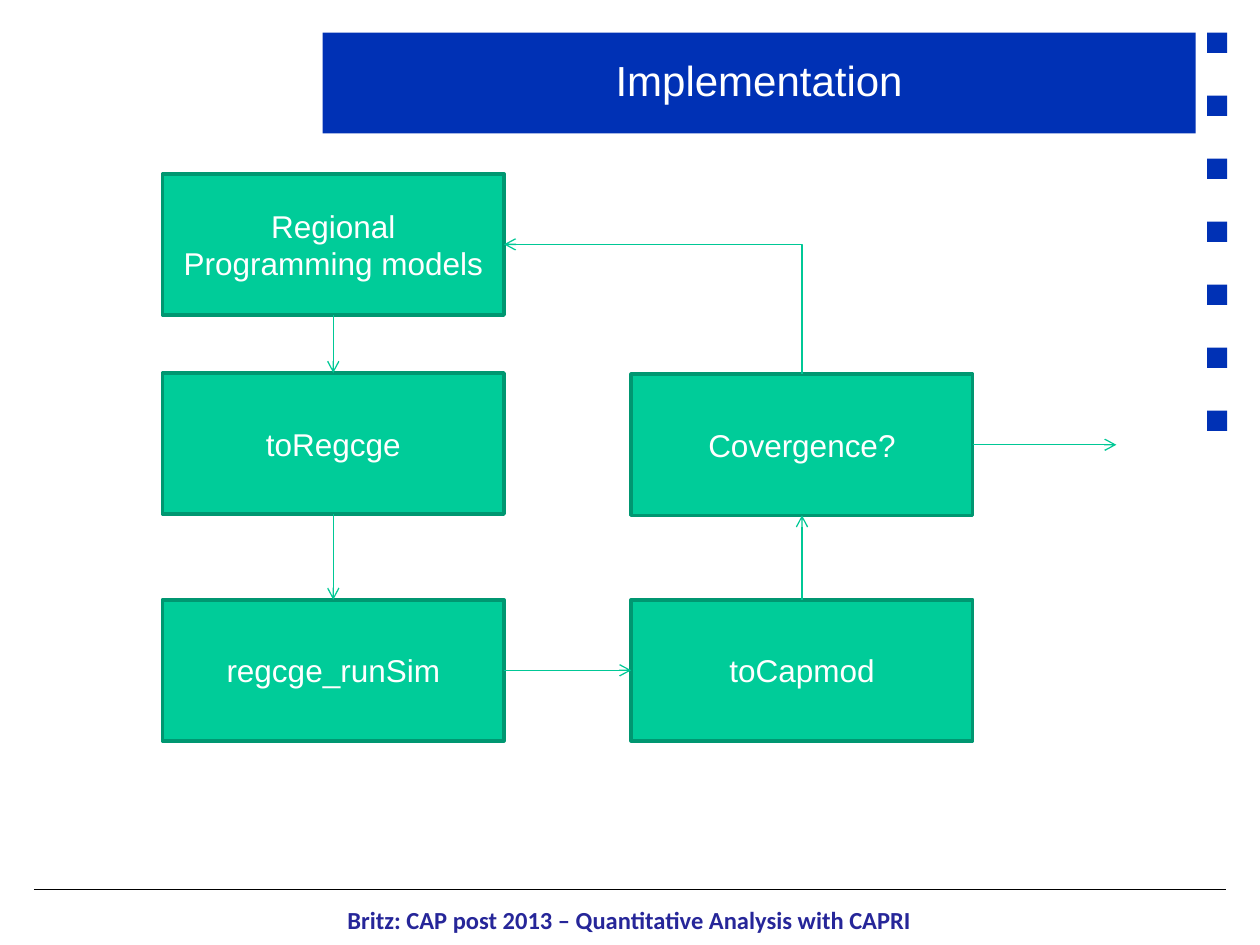
from dataclasses import dataclass

from lxml.etree import SubElement
from pptx import Presentation
from pptx.dml.color import RGBColor
from pptx.enum.shapes import MSO_CONNECTOR as Connector, MSO_SHAPE as Shape
from pptx.enum.text import MSO_ANCHOR as Anchor, PP_ALIGN as Align
from pptx.oxml.ns import qn
from pptx.util import Inches, Pt

TOP, LEFT, BOTTOM, RIGHT = range(4)


@dataclass(frozen=True)
class Theme:
    blue: str = "0031B5"
    green: str = "00CC99"
    box_edge: str = "009771"
    arrow: str = "00C896"
    footer: str = "262699"
    white: str = "FFFFFF"
    black: str = "000000"
    font: str = "Arial"
    footer_font: str = "Calibri"
    title_size: int = 24
    box_size: int = 18
    footer_size: int = 14
    edge_width: float = 2
    line_width: float = 0.75


def color(value):
    return RGBColor.from_string(value)


def write(frame, text, *, size, fill, font, bold=False, spacing=None):
    """Fill a text frame with centred paragraphs, one per line of text."""
    frame.word_wrap = True
    frame.vertical_anchor = Anchor.MIDDLE
    frame.text = text
    for paragraph in frame.paragraphs:
        paragraph.alignment = Align.CENTER
        if spacing:
            paragraph.line_spacing = spacing
        for run in paragraph.runs:
            run.font.name = font
            run.font.size = Pt(size)
            run.font.bold = bold
            run.font.color.rgb = color(fill)


class SlideBuilder:
    def __init__(self, slide, theme):
        self.slide = slide
        self.theme = theme

    def title(self, text, left, top, width, height):
        title = self.slide.shapes.title
        title.left, title.top = Inches(left), Inches(top)
        title.width, title.height = Inches(width), Inches(height)
        title.fill.solid()
        title.fill.fore_color.rgb = color(self.theme.blue)
        write(title.text_frame, text, size=self.theme.title_size,
              fill=self.theme.white, font=self.theme.font, spacing=0.9)

    def rectangle(self, left, top, width, height, fill, edge=None):
        shape = self.slide.shapes.add_shape(
            Shape.RECTANGLE, Inches(left), Inches(top), Inches(width), Inches(height))
        shape.shadow.inherit = False
        shape.fill.solid()
        shape.fill.fore_color.rgb = color(fill)
        if edge:
            shape.line.color.rgb = color(edge)
            shape.line.width = Pt(self.theme.edge_width)
        else:
            shape.line.fill.background()
        return shape

    def box(self, text, left, top, width=2.71, height=1.12):
        shape = self.rectangle(left, top, width, height, self.theme.green, self.theme.box_edge)
        write(shape.text_frame, text, size=self.theme.box_size,
              fill=self.theme.white, font=self.theme.font)
        return shape

    def footer(self, text, left, top, width, height):
        frame = self.slide.shapes.add_textbox(
            Inches(left), Inches(top), Inches(width), Inches(height)).text_frame
        frame.margin_left = frame.margin_right = frame.margin_bottom = 0
        frame.margin_top = Inches(0.08)
        write(frame, text, size=self.theme.footer_size, fill=self.theme.footer,
              font=self.theme.footer_font, bold=True)

    def line(self, start, end, fill, kind=Connector.STRAIGHT):
        points = [Inches(value) for value in (*start, *end)]
        line = self.slide.shapes.add_connector(kind, *points)
        line.line.color.rgb = color(fill)
        line.line.width = Pt(self.theme.line_width)
        SubElement(line._element.spPr, qn("a:effectLst"))
        return line

    def arrow(self, source, source_side, target, target_side, kind=Connector.STRAIGHT):
        """Join two boxes; a target of None leaves the end free."""
        arrow = self.line((0, 0), (0, 0), self.theme.arrow, kind)
        arrow.begin_connect(source, source_side)
        if target is None:
            arrow.end_x, arrow.end_y = arrow.begin_x + Inches(1.14), arrow.begin_y
        else:
            arrow.end_connect(target, target_side)
        SubElement(arrow.line._get_or_add_ln(), qn("a:tailEnd"), type="arrow")
        return arrow

    def corner_arrow(self, source, target):
        """Go up from the source, then left into the target, with one bend."""
        arrow = self.arrow(source, TOP, target, RIGHT, Connector.ELBOW)
        across, up = arrow.width, arrow.height
        shift = (across - up) // 2
        # The one-bend preset is drawn lying down and turned by 270 degrees
        arrow.left, arrow.top = arrow.left + shift, arrow.top - shift
        arrow.width, arrow.height = up, across
        properties = arrow._element.spPr
        properties.find(qn("a:prstGeom")).set("prst", "bentConnector2")
        transform = properties.find(qn("a:xfrm"))
        transform.attrib.pop("flipH", None)
        transform.set("flipV", "1")
        transform.set("rot", str(270 * 60000))


def main():
    theme = Theme()
    presentation = Presentation()
    presentation.slide_width, presentation.slide_height = Inches(10), Inches(7.5)
    slide = presentation.slides.add_slide(presentation.slide_layouts[5])
    builder = SlideBuilder(slide, theme)

    # Frame: footer rule, column of squares, title and footer
    builder.line((0.27, 7.06), (9.73, 7.06), theme.black)
    for index in range(7):
        builder.rectangle(9.58, 0.26 + 0.5 * index, 0.16, 0.16, theme.blue)
    builder.title("Implementation", 2.56, 0.26, 6.93, 0.8)
    builder.footer("Britz: CAP post 2013 – Quantitative Analysis with CAPRI",
                   0.27, 7.14, 9.45, 0.24)

    # Steps in two columns
    first, second = 1.29, 5.01
    models = builder.box("Regional\nProgramming models", first, 1.38)
    to_regcge = builder.box("toRegcge", first, 2.96)
    run_sim = builder.box("regcge_runSim", first, 4.76)
    to_capmod = builder.box("toCapmod", second, 4.76)
    convergence = builder.box("Covergence?", second, 2.97)

    # Flow of the loop and its exit
    builder.arrow(models, BOTTOM, to_regcge, TOP)
    builder.arrow(to_regcge, BOTTOM, run_sim, TOP)
    builder.arrow(run_sim, RIGHT, to_capmod, LEFT)
    builder.arrow(to_capmod, TOP, convergence, BOTTOM)
    builder.arrow(convergence, RIGHT, None, None)
    builder.corner_arrow(convergence, models)

    presentation.save("out.pptx")


if __name__ == "__main__":
    main()
